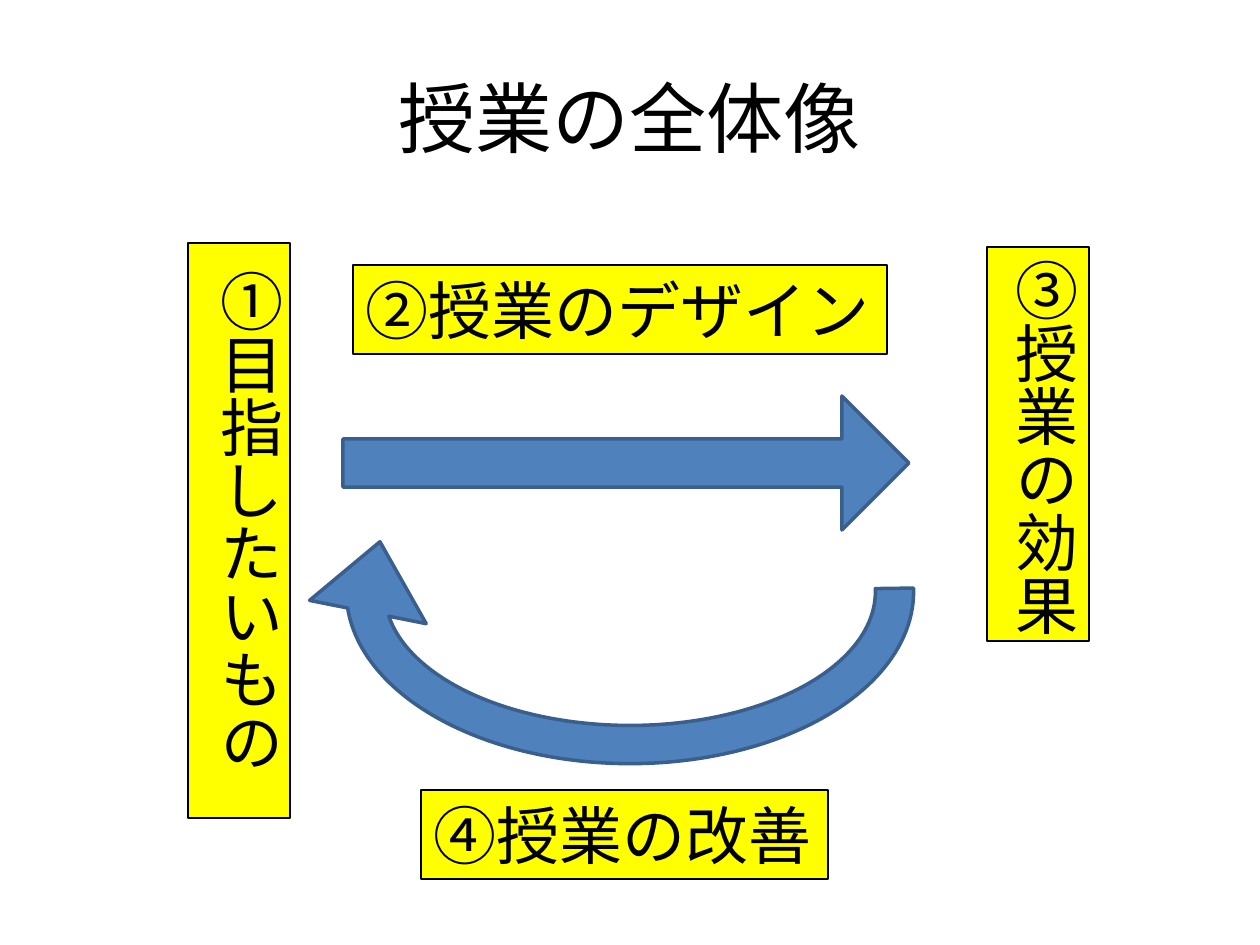
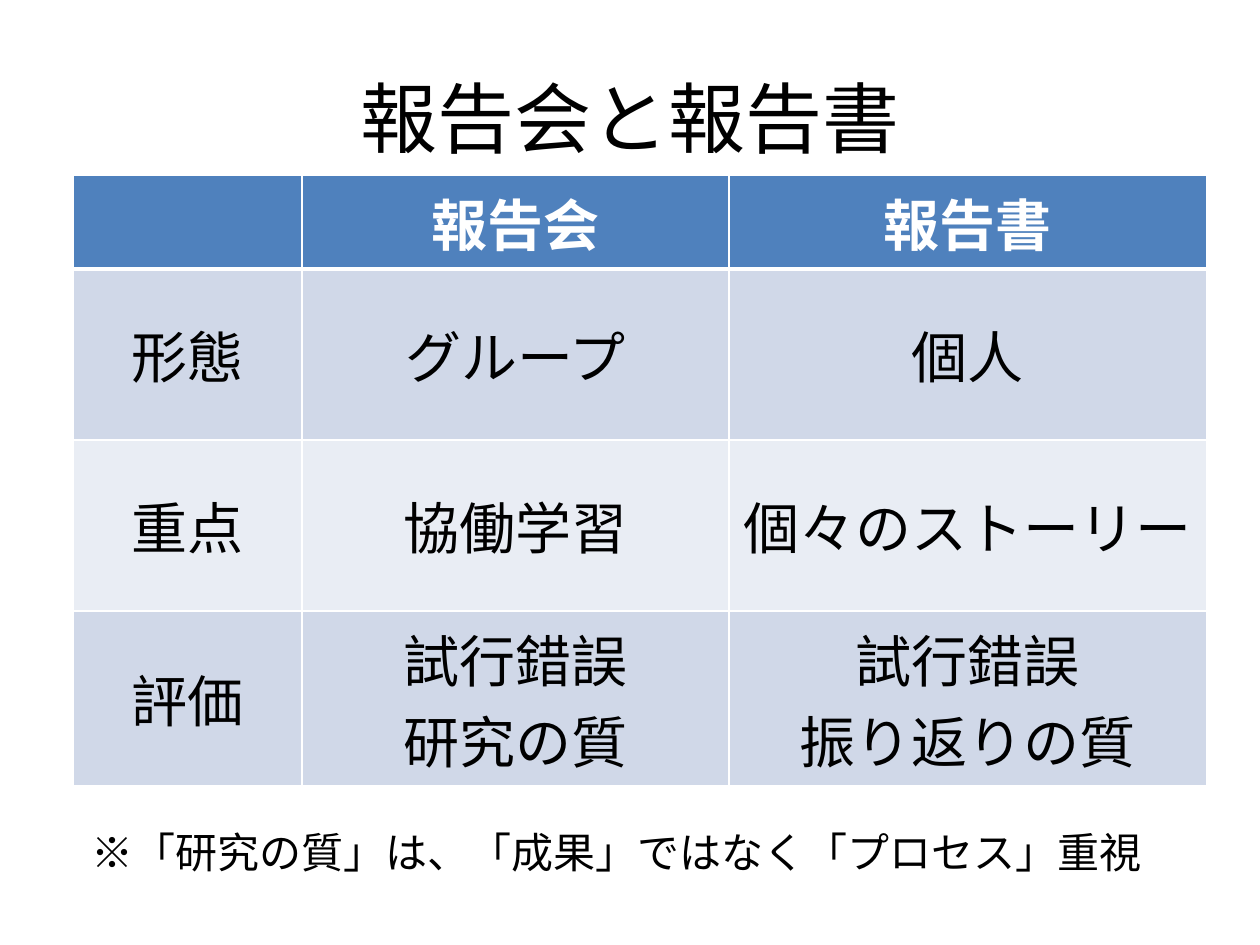
"""Build two slides: the overall picture of a class, and a table of reporting formats."""
import pptx
import pptx.util
import pptx.dml.color
import pptx.enum.shapes
import pptx.enum.text
import pptx.oxml
import pptx.oxml.ns

EMU_PER_PX = 914400 / 126
BLACK, WHITE, YELLOW = "000000", "FFFFFF", "FFFF00"
BLUE, DARK_BLUE = "4F81BD", "3A5F8C"
BAND_FILLS = ["D0D8E8", "E9EDF4"]
FONT = "Lato"
CENTER = pptx.enum.text.PP_ALIGN.CENTER
MIDDLE = pptx.enum.text.MSO_ANCHOR.MIDDLE
FIT_SHAPE = pptx.enum.text.MSO_AUTO_SIZE.SHAPE_TO_FIT_TEXT
color = pptx.dml.color.RGBColor.from_string


def px(*lengths):
    return [pptx.util.Emu(round(length * EMU_PER_PX)) for length in lengths]


def write_text(frame, text, size, hex_color=BLACK, bold=False, alignment=None):
    frame.text = text
    font_format = {"name": FONT, "size": pptx.util.Pt(size), "bold": bold}
    for paragraph in frame.paragraphs:
        paragraph.alignment = alignment
        for run in paragraph.runs:
            for name, value in font_format.items():
                setattr(run.font, name, value)
            run.font.color.rgb = color(hex_color)


presentation = pptx.Presentation()
presentation.slide_width, presentation.slide_height = px(1260, 945)

slides = []
for title_text in ["授業の全体像", "報告会と報告書"]:
    slide = presentation.slides.add_slide(presentation.slide_layouts[5])
    title = slide.shapes.title
    title.left, title.top, title.width, title.height = px(63, 38, 1134, 158)
    write_text(title.text_frame, title_text, 44, alignment=CENTER)
    title.text_frame.vertical_anchor = MIDDLE
    slides.append(slide)
overview_slide, report_slide = slides

labels = [
    (" ①目指したいもの", (188, 243, 102, 575), "eaVert"),
    ("③授業の効果", (987, 247, 102, 394), "eaVert"),
    ("②授業のデザイン", (353, 265, 534, 89), "horz"),
    ("④授業の改善", (421, 790, 407, 89), "horz"),
]
for text, bounds, direction in labels:
    label = overview_slide.shapes.add_textbox(*px(*bounds))
    label.fill.solid()
    label.fill.fore_color.rgb = color(YELLOW)
    label.line.color.rgb = color(BLACK)
    label.line.width = pptx.util.Pt(0.75)
    frame = label.text_frame
    write_text(frame, text, 36)
    for name, value in {"word_wrap": False, "auto_size": FIT_SHAPE}.items():
        setattr(frame, name, value)
    frame._txBody.bodyPr.set("vert", direction)

arrow_types = pptx.enum.shapes.MSO_SHAPE
arrows = [
    (arrow_types.RIGHT_ARROW, (343, 396, 566, 134), 0, [0.36, 0.5]),
    (arrow_types.CIRCULAR_ARROW, (306, 379, 648, 425), 180,
     [0.09, 9.44, 213.32, 107.58, 0.14]),
]
for arrow_type, bounds, rotation, adjustments in arrows:
    arrow = overview_slide.shapes.add_shape(arrow_type, *px(*bounds))
    arrow.rotation = rotation
    for index, adjustment in enumerate(adjustments):
        arrow.adjustments[index] = adjustment
    arrow.shadow.inherit = False
    arrow.fill.solid()
    arrow.fill.fore_color.rgb = color(BLUE)
    arrow.line.color.rgb = color(DARK_BLUE)
    arrow.line.width = pptx.util.Pt(2)

rows = [
    ["", "報告会", "報告書"],
    ["形態", "グループ", "個人"],
    ["重点", "協働学習", "個々のストーリー"],
    ["評価", "試行錯誤\n研究の質", "試行錯誤\n振り返りの質"],
]
table = report_slide.shapes.add_table(4, 3, *px(73, 175, 1134, 601)).table
for column, width in zip(table.columns, px(229, 427, 478)):
    column.width = width
for row, height in zip(table.rows, px(88, 171, 171, 171)):
    row.height = height
for row_index, texts in enumerate(rows):
    is_header = row_index == 0
    for column_index, text in enumerate(texts):
        cell = table.cell(row_index, column_index)
        write_text(cell.text_frame, text, 32, WHITE if is_header else BLACK,
                   is_header, CENTER)
        if not is_header:
            cell.vertical_anchor = MIDDLE
        border_widths = {"lnL": 1, "lnR": 1, "lnT": 3 if row_index == 1 else 1,
                         "lnB": 3 if is_header else 1}
        for side, points in border_widths.items():
            cell._tc.get_or_add_tcPr().append(pptx.oxml.parse_xml(
                f'<a:{side} {pptx.oxml.ns.nsdecls("a")} w="{points * 12700}">'
                f'<a:solidFill><a:srgbClr val="{WHITE}"/></a:solidFill></a:{side}>'))
        cell.fill.solid()
        cell.fill.fore_color.rgb = color(
            BLUE if is_header else BAND_FILLS[(row_index - 1) % 2])

note = report_slide.shapes.add_textbox(*px(79, 820, 1101, 63))
write_text(note.text_frame, "※「研究の質」は、「成果」ではなく「プロセス」重視", 24)
for name, value in {"word_wrap": True, "auto_size": FIT_SHAPE}.items():
    setattr(note.text_frame, name, value)

presentation.save("out.pptx")
